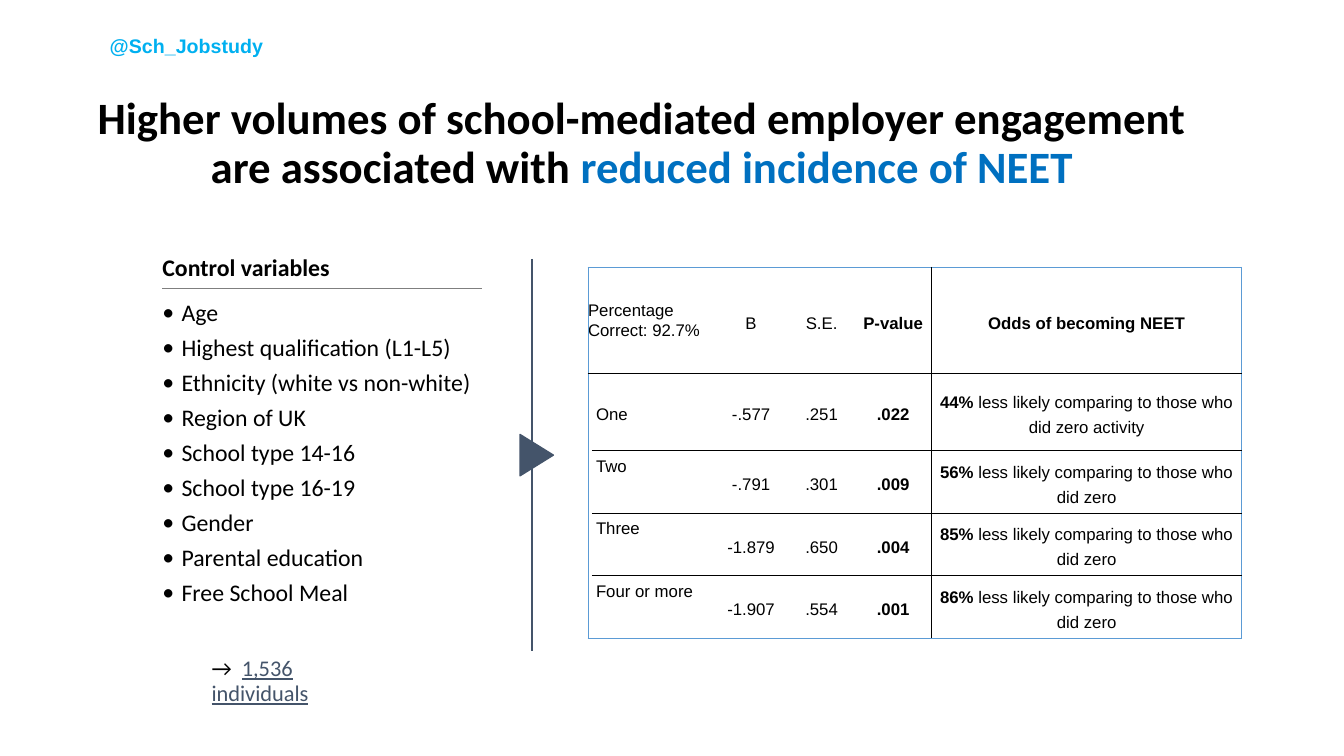
from dataclasses import dataclass
from typing import Optional

from lxml.etree import SubElement
from pptx import Presentation
from pptx.dml.color import RGBColor
from pptx.enum.shapes import MSO_CONNECTOR as CONN, MSO_SHAPE as SHAPE
from pptx.enum.text import MSO_ANCHOR as ANCHOR, PP_ALIGN as ALIGN
from pptx.oxml.ns import qn
from pptx.util import Pt

BLACK, SLATE, BLUE, SKY = "000000", "44546A", "0070C0", "00B0F0"
EDGE, RULE = "5B9BD5", "7F7F7F"


@dataclass
class Span:
    text: str
    size: float
    color: str = BLACK
    bold: bool = False
    underline: bool = False
    font: str = "Calibri"


@dataclass
class Activity:
    count: str
    b: str
    se: str
    p_value: str
    odds: str
    comparison: str


CONTROLS = ["Age", "Highest qualification (L1-L5)", "Ethnicity (white vs non-white)",
            "Region of UK", "School type 14-16", "School type 16-19", "Gender",
            "Parental education", "Free School Meal"]
LESS = " less likely comparing to those who did zero"
ACTIVITIES = [
    Activity("One", "-.577", ".251", ".022", "44%", LESS + " activity"),
    Activity("Two", "-.791", ".301", ".009", "56%", LESS),
    Activity("Three", "-1.879", ".650", ".004", "85%", LESS),
    Activity("Four or more", "-1.907", ".554", ".001", "86%", LESS),
]
HEADERS = ["Percentage Correct: 92.7%", None, "B", "S.E.", "P-value", "Odds of becoming NEET"]
COLS = [2.2, 87, 53.3, 47.5, 54.7, 221.8]
ROWS = [75.6, 55.4, 44.6, 44.6, 44.6]


def rgb(color: str) -> RGBColor:
    return RGBColor.from_string(color)


def write(p, spans: list[Span], align=ALIGN.LEFT, spacing: float = 1.0,
          indent: float = 0, hanging: float = 0) -> None:
    p.alignment, p.line_spacing = align, spacing
    pPr = p._p.get_or_add_pPr()
    pPr.set("marL", str(Pt(indent)))
    pPr.set("indent", str(Pt(-hanging)))
    for span in spans:
        r = p.add_run()
        r.text = span.text
        r.font.name, r.font.size = span.font, Pt(span.size)
        r.font.bold, r.font.underline = span.bold, span.underline
        r.font.color.rgb = rgb(span.color)


def add_box(shapes, x: float, y: float, w: float, h: float, inset: bool = True):
    tf = shapes.add_textbox(Pt(x), Pt(y), Pt(w), Pt(h)).text_frame
    tf.word_wrap = True
    if not inset:
        tf.margin_left = tf.margin_right = tf.margin_top = tf.margin_bottom = 0
    return tf


def add_line(shapes, x1: float, y1: float, x2: float, y2: float,
             color: str, width: float) -> None:
    line = shapes.add_connector(CONN.STRAIGHT, Pt(x1), Pt(y1), Pt(x2), Pt(y2))
    line.line.color.rgb, line.line.width = rgb(color), Pt(width)
    SubElement(line._element.spPr, qn("a:effectLst"))


def add_bullet(p) -> None:
    pPr = p._p.get_or_add_pPr()
    SubElement(pPr, qn("a:buFont")).set("typeface", "Calibri")
    SubElement(pPr, qn("a:buChar")).set("char", "•")


def add_border(cell, side: str, color: Optional[str]) -> None:
    ln = SubElement(cell._tc.get_or_add_tcPr(), qn(f"a:ln{side}"))
    if color is None:
        SubElement(ln, qn("a:noFill"))
        return
    ln.set("w", str(Pt(0.75 if color == EDGE else 1)))
    SubElement(SubElement(ln, qn("a:solidFill")), qn("a:srgbClr")).set("val", color)


def style_cell(cell, row: int, col: int) -> None:
    last_row, last_col = len(ROWS) - 1, len(COLS) - 1
    inner = BLACK if col else None  # the narrow first column is merged below the header
    merged_top = col == 0 and row == 1
    borders = {
        "L": EDGE if col == 0 else BLACK if col == last_col else None,
        "R": EDGE if col == last_col else BLACK if col == last_col - 1 else None,
        "T": EDGE if row == 0 else BLACK if row == 1 else inner,
        "B": EDGE if row == last_row or merged_top else BLACK if row == 0 else inner,
    }
    for side, color in borders.items():
        add_border(cell, side, color)
    cell.fill.background()
    cell.margin_left = cell.margin_right = cell.margin_top = cell.margin_bottom = 0
    top = col == 1 and row > 1
    cell.vertical_anchor = ANCHOR.TOP if top else ANCHOR.MIDDLE


def add_results(shapes) -> None:
    frame = shapes.add_table(len(ROWS), len(COLS), Pt(420), Pt(191),
                             Pt(sum(COLS)), Pt(sum(ROWS)))
    table = frame.table
    table.first_row = table.horz_banding = False
    for column, width in zip(table.columns, COLS):
        column.width = Pt(width)
    for row, height in zip(table.rows, ROWS):
        row.height = Pt(height)
    body = [[None, a.count, a.b, a.se, a.p_value, a.odds] for a in ACTIVITIES]
    for i, texts in enumerate([HEADERS] + body):
        for j, text in enumerate(texts):
            cell = table.cell(i, j)
            style_cell(cell, i, j)
            if text is None:
                continue
            spans = [Span(text, 12, bold=j >= 4, font="Arial")]
            if i and j == 5:
                spans.append(Span(ACTIVITIES[i - 1].comparison, 12, font="Arial"))
            write(cell.text_frame.paragraphs[0], spans,
                  ALIGN.CENTER if j > 1 else ALIGN.LEFT,
                  1.33 if j else 1.07, 2.9 if j == 1 else 0)
    table.cell(0, 0).merge(table.cell(0, 1))
    table.cell(1, 0).merge(table.cell(len(ROWS) - 1, 0))


def main() -> None:
    prs = Presentation()
    prs.slide_width, prs.slide_height = Pt(960), Pt(540)
    shapes = prs.slides.add_slide(prs.slide_layouts[6]).shapes

    # Title
    tf = add_box(shapes, 44.6, 51.1, 828, 104.4)
    tf.vertical_anchor = ANCHOR.MIDDLE
    write(tf.paragraphs[0], [
        Span("Higher volumes of school-mediated employer engagement are associated with ",
             32, bold=True),
        Span("reduced incidence of NEET", 32, BLUE, True)], ALIGN.CENTER, 0.9)

    # Control variables
    add_line(shapes, 116, 205.8, 344.2, 205.8, RULE, 0.75)
    tf = add_box(shapes, 116, 182, 225.4, 19.4, inset=False)
    write(tf.paragraphs[0], [Span("Control variables", 17, bold=True)], spacing=0.93)
    tf = add_box(shapes, 116, 214.6, 225.4, 221, inset=False)
    for i, control in enumerate(CONTROLS):
        p = tf.add_paragraph() if i else tf.paragraphs[0]
        write(p, [Span(control, 17)], spacing=0.93, indent=13.7, hanging=13.7)
        p.space_before = Pt(6 if i else 0)
        add_bullet(p)

    # Divider with arrowhead
    divider = shapes.add_group_shape().shapes
    add_line(divider, 380, 185, 380, 465.1, SLATE, 1)
    sp = divider.add_shape(SHAPE.ISOSCELES_TRIANGLE, Pt(368.6), Pt(313.2), Pt(29.5), Pt(23.8))
    sp.rotation = 90
    sp.shadow.inherit = False
    sp.fill.solid()
    sp.fill.fore_color.rgb = sp.line.color.rgb = rgb(SLATE)
    sp.line.width = Pt(1)

    # Sample size
    tf = add_box(shapes, 108, 465.5, 147.6, 25.2)
    write(tf.paragraphs[0], [Span("→  ", 16),
                             Span("1,536 individuals", 16, SLATE, underline=True)],
          spacing=0.93, indent=36)

    # Results table and handle
    add_results(shapes)
    tf = add_box(shapes, 71.3, 20.9, 131, 24.5)
    write(tf.paragraphs[0], [Span("@Sch_Jobstudy", 14, SKY, True, font="Arial")])

    prs.save("out.pptx")


if __name__ == "__main__":
    main()
